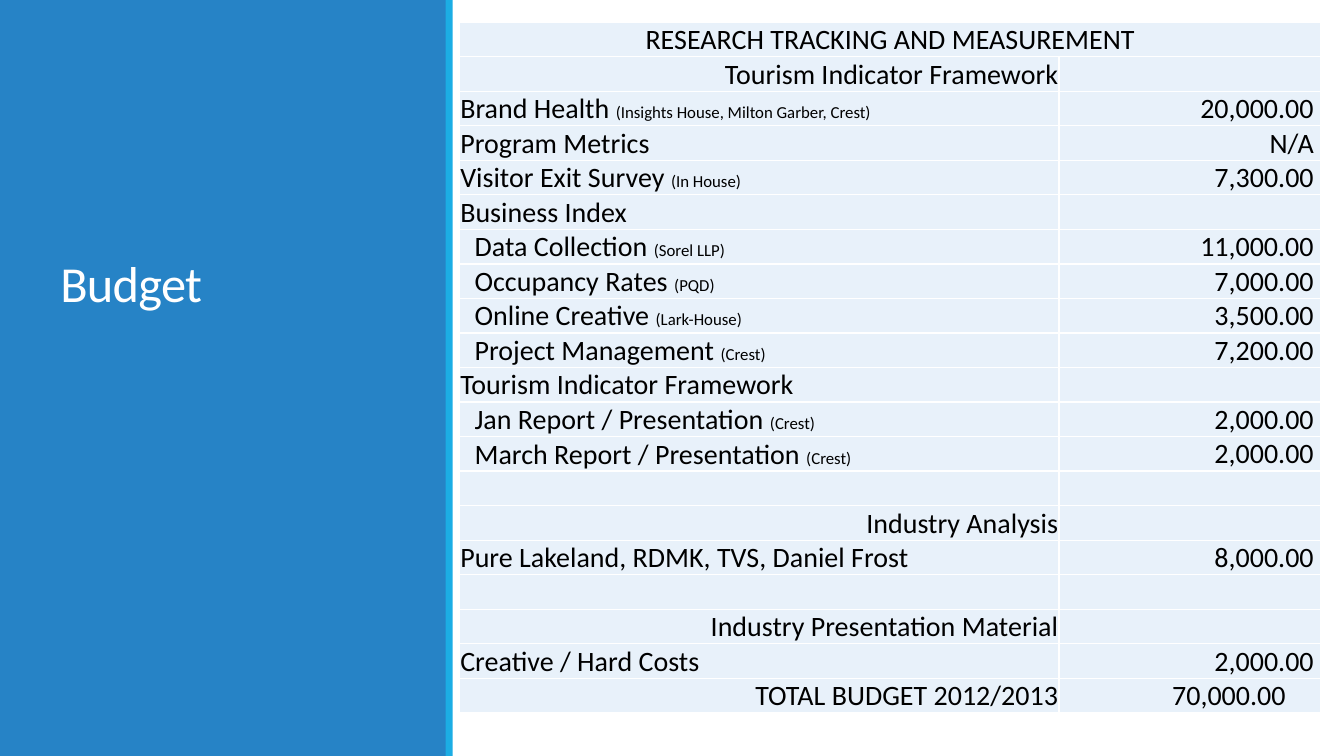
"""Build the research budget slide."""
from dataclasses import dataclass

import pptx
import pptx.dml.color
import pptx.enum.shapes
import pptx.enum.text
import pptx.oxml.ns
import pptx.slide
import pptx.table
import pptx.text.text
import pptx.util
from lxml import etree
from pptx.dml.color import RGBColor
from pptx.enum.text import MSO_ANCHOR, PP_ALIGN
from pptx.util import Cm

BLUE = RGBColor(0x26, 0x83, 0xC6)
CYAN = RGBColor(0x1C, 0xAD, 0xE4)
PALE = RGBColor(0xE8, 0xF1, 0xFA)
WHITE = RGBColor(0xFF, 0xFF, 0xFF)
BLACK = RGBColor(0x00, 0x00, 0x00)
FONT = "Calibri"
ROW_HEIGHT = Cm(0.87)
EDGE = Cm(0.02)
INDENT = Cm(0.38)
AMOUNT_EDGE = Cm(0.18)
TOTAL_INDENT = Cm(2.85)


@dataclass(frozen=True)
class Band:
    """A full-height strip of colour."""
    left: float
    width: float
    color: RGBColor


@dataclass(frozen=True)
class Entry:
    """One row of the budget."""
    label: str = ""
    amount: str = ""
    note: str = ""
    indented: bool = False
    align: PP_ALIGN = PP_ALIGN.LEFT


BANDS = [Band(0, 11.25, BLUE), Band(11.23, 0.18, CYAN)]
ENTRIES = [
    Entry("RESEARCH TRACKING AND MEASUREMENT", align=PP_ALIGN.CENTER),
    Entry("Tourism Indicator Framework", align=PP_ALIGN.RIGHT),
    Entry("Brand Health", "20,000.00", "(Insights House, Milton Garber, Crest)"),
    Entry("Program Metrics", "N/A"),
    Entry("Visitor Exit Survey", "7,300.00", "(In House)"),
    Entry("Business Index"),
    Entry("Data Collection", "11,000.00", "(Sorel LLP)", True),
    Entry("Occupancy Rates", "7,000.00", "(PQD)", True),
    Entry("Online Creative", "3,500.00", "(Lark-House)", True),
    Entry("Project Management", "7,200.00", "(Crest)", True),
    Entry("Tourism Indicator Framework"),
    Entry("Jan Report / Presentation", "2,000.00", "(Crest)", True),
    Entry("March Report / Presentation", "2,000.00", "(Crest)", True),
    Entry(),
    Entry("Industry Analysis", align=PP_ALIGN.RIGHT),
    Entry("Pure Lakeland, RDMK, TVS, Daniel Frost", "8,000.00"),
    Entry(),
    Entry("Industry Presentation Material", align=PP_ALIGN.RIGHT),
    Entry("Creative / Hard Costs", "2,000.00"),
    Entry("TOTAL BUDGET 2012/2013", "70,000.00", align=PP_ALIGN.RIGHT),
]


def add_span(para: pptx.text.text._Paragraph, text: str, size: float,
             color: RGBColor) -> pptx.text.text._Run:
    """Add one formatted run."""
    span = para.add_run()
    span.text = text
    span.font.name = FONT
    span.font.size = pptx.util.Pt(size)
    span.font.color.rgb = color
    return span


def add_band(page: pptx.slide.Slide, band: Band, height: int) -> None:
    """Draw a coloured strip."""
    shape = page.shapes.add_shape(pptx.enum.shapes.MSO_SHAPE.RECTANGLE,
                                  Cm(band.left), 0, Cm(band.width), height)
    shape.shadow.inherit = False
    shape.fill.solid()
    shape.fill.fore_color.rgb = band.color
    shape.line.fill.background()


def add_title(page: pptx.slide.Slide) -> None:
    """Write the slide title."""
    box = page.shapes.add_textbox(Cm(1.27), Cm(1.65), Cm(8.89), Cm(6.35))
    frame = box.text_frame
    frame.word_wrap = True
    frame.vertical_anchor = MSO_ANCHOR.BOTTOM
    para = frame.paragraphs[0]
    para.line_spacing = 0.85
    span = add_span(para, "Budget", 36, WHITE)
    span.font._element.set("spc", "-50")


def style_cell(cell: pptx.table._Cell) -> None:
    """Set the margins, white borders and fill of a cell."""
    cell.margin_left = cell.margin_right = cell.margin_top = EDGE
    cell.margin_bottom = 0
    properties = cell._tc.get_or_add_tcPr()
    for side in ("lnL", "lnR", "lnT", "lnB"):
        line = etree.SubElement(properties, pptx.oxml.ns.qn(f"a:{side}"), w="12700")
        fill = etree.SubElement(line, pptx.oxml.ns.qn("a:solidFill"))
        etree.SubElement(fill, pptx.oxml.ns.qn("a:srgbClr"), val=str(WHITE))
    cell.fill.solid()
    cell.fill.fore_color.rgb = PALE


def write_label(cell: pptx.table._Cell, entry: Entry) -> None:
    """Write the label and its small note."""
    para = cell.text_frame.paragraphs[0]
    para.alignment = entry.align
    if entry.indented:
        cell.margin_left = INDENT
    if entry.note:
        add_span(para, f"{entry.label} ", 20, BLACK)
        add_span(para, entry.note, 12, BLACK)
    elif entry.label:
        add_span(para, entry.label, 20, BLACK)


def write_amount(cell: pptx.table._Cell, entry: Entry, is_total: bool) -> None:
    """Write the amount of a row."""
    para = cell.text_frame.paragraphs[0]
    cell.vertical_anchor = MSO_ANCHOR.BOTTOM
    if is_total:
        cell.margin_left = TOTAL_INDENT
        para.alignment = PP_ALIGN.LEFT
    else:
        cell.margin_right = AMOUNT_EDGE
        para.alignment = PP_ALIGN.RIGHT
    add_span(para, entry.amount, 20, BLACK)


def add_budget(page: pptx.slide.Slide) -> None:
    """Build the budget table."""
    widths = (Cm(15.11), Cm(6.6))
    table = page.shapes.add_table(len(ENTRIES), len(widths), Cm(11.58), Cm(0.56),
                                  sum(widths), ROW_HEIGHT * len(ENTRIES)).table
    table.first_row = table.horz_banding = False
    for column, width in zip(table.columns, widths):
        column.width = width
    for row, entry in zip(table.rows, ENTRIES):
        row.height = ROW_HEIGHT
        label, amount = row.cells
        style_cell(label)
        style_cell(amount)
        write_label(label, entry)
        if entry.amount:
            write_amount(amount, entry, entry is ENTRIES[-1])
    heading = table.cell(0, 0)
    heading.merge(table.cell(0, 1))
    heading.vertical_anchor = MSO_ANCHOR.BOTTOM


def main() -> None:
    """Create and save the deck."""
    deck = pptx.Presentation()
    deck.slide_width = Cm(33.87)
    deck.slide_height = Cm(19.05)
    page = deck.slides.add_slide(deck.slide_layouts[6])
    for band in BANDS:
        add_band(page, band, deck.slide_height)
    add_title(page)
    add_budget(page)
    deck.save("out.pptx")


if __name__ == "__main__":
    main()
